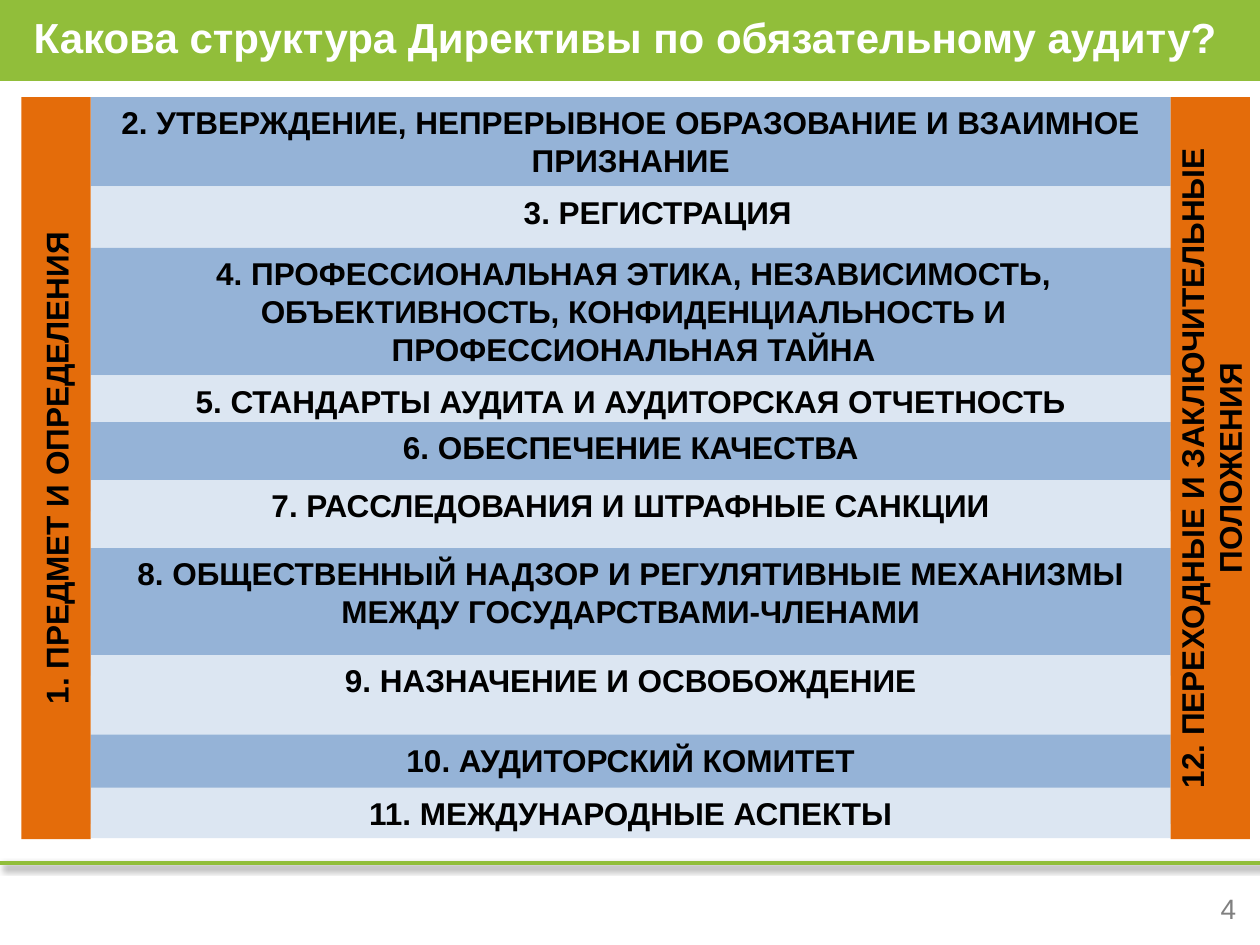
from dataclasses import dataclass

from lxml import etree
from pptx import Presentation
from pptx.dml.color import RGBColor
from pptx.enum.shapes import MSO_CONNECTOR, MSO_SHAPE
from pptx.enum.text import MSO_ANCHOR, PP_ALIGN
from pptx.oxml.ns import qn
from pptx.util import Cm, Pt

RECTANGLE = MSO_SHAPE.RECTANGLE
STRAIGHT = MSO_CONNECTOR.STRAIGHT
TOP, MIDDLE = MSO_ANCHOR.TOP, MSO_ANCHOR.MIDDLE
LEFT, CENTER, RIGHT = PP_ALIGN.LEFT, PP_ALIGN.CENTER, PP_ALIGN.RIGHT


@dataclass(frozen=True)
class Theme:
    font: str = "Arial"
    green: str = "91BE3A"
    orange: str = "E46C0A"
    blue: str = "95B3D7"
    pale: str = "DCE6F2"
    white: str = "FFFFFF"
    black: str = "000000"
    gray: str = "808080"
    title_size: int = 24
    body_size: int = 18
    number_size: int = 16


class PageBuilder:
    def __init__(self, page, theme):
        self.page = page
        self.theme = theme

    def set_text(self, shape, text, size, color, align, anchor, bold=True):
        frame = shape.text_frame
        frame.word_wrap = True
        frame.vertical_anchor = anchor
        frame.text = text
        para = frame.paragraphs[0]
        para.alignment = align
        for span in para.runs:
            span.font.name = self.theme.font
            span.font.size = Pt(size)
            span.font.bold = bold
            span.font.color.rgb = RGBColor.from_string(color)

    def label(self, left, top, width, height, text, size, color, align, bold):
        box = self.page.shapes.add_textbox(Cm(left), Cm(top), Cm(width), Cm(height))
        self.set_text(box, text, size, color, align, MIDDLE, bold)

    def block(self, left, top, width, height, fill):
        shape = self.page.shapes.add_shape(
            RECTANGLE, Cm(left), Cm(top), Cm(width), Cm(height))
        shape.shadow.inherit = False
        shape.fill.solid()
        shape.fill.fore_color.rgb = RGBColor.from_string(fill)
        shape.line.fill.background()
        return shape

    def chapter(self, left, top, width, height, fill, text):
        shape = self.block(left, top, width, height, fill)
        self.set_text(shape, text, self.theme.body_size, self.theme.black, CENTER, TOP)

    def pillar(self, left, top, width, height, text):
        shape = self.block(left, top, width, height, self.theme.orange)
        self.set_text(shape, text, self.theme.body_size, self.theme.black, CENTER, MIDDLE)
        shape.text_frame._txBody.bodyPr.set("vert", "vert270")

    def rule(self, top, width):
        line = self.page.shapes.add_connector(STRAIGHT, 0, Cm(top), Cm(width), Cm(top))
        line.line.color.rgb = RGBColor.from_string(self.theme.green)
        line.line.width = Pt(2)
        effects = etree.SubElement(line._element.spPr, qn("a:effectLst"))
        shadow = etree.SubElement(
            effects, qn("a:outerShdw"), blurRad=str(Pt(4)), dist=str(Pt(3)),
            dir=str(45 * 60000), algn="tl", rotWithShape="0")
        tint = etree.SubElement(shadow, qn("a:srgbClr"), val=self.theme.black)
        etree.SubElement(tint, qn("a:alpha"), val="40000")


PAGE_WIDTH, PAGE_HEIGHT = 25.4, 19.05
BODY_TOP, BODY_HEIGHT = 1.96, 14.96
CHAPTER_LEFT, CHAPTER_WIDTH = 1.83, 21.77
ONE_LINE, TWO_LINES, THREE_LINES = 1.02, 1.8, 2.57

CHAPTERS = [
    (BODY_TOP, CHAPTER_WIDTH, TWO_LINES,
     "2. УТВЕРЖДЕНИЕ, НЕПРЕРЫВНОЕ ОБРАЗОВАНИЕ И ВЗАИМНОЕ ПРИЗНАНИЕ"),
    (3.76, 22.86, TWO_LINES, "3. РЕГИСТРАЦИЯ"),
    (5, 21.89, THREE_LINES,
     "4. ПРОФЕССИОНАЛЬНАЯ ЭТИКА, НЕЗАВИСИМОСТЬ, ОБЪЕКТИВНОСТЬ, "
     "КОНФИДЕНЦИАЛЬНОСТЬ И ПРОФЕССИОНАЛЬНАЯ ТАЙНА"),
    (7.57, CHAPTER_WIDTH, ONE_LINE, "5. СТАНДАРТЫ АУДИТА И АУДИТОРСКАЯ ОТЧЕТНОСТЬ"),
    (8.51, CHAPTER_WIDTH, TWO_LINES, "6. ОБЕСПЕЧЕНИЕ КАЧЕСТВА"),
    (9.68, CHAPTER_WIDTH, TWO_LINES, "7. РАССЛЕДОВАНИЯ И ШТРАФНЫЕ САНКЦИИ"),
    (11.05, CHAPTER_WIDTH, THREE_LINES,
     "8. ОБЩЕСТВЕННЫЙ НАДЗОР И РЕГУЛЯТИВНЫЕ МЕХАНИЗМЫ "
     "МЕЖДУ ГОСУДАРСТВАМИ-ЧЛЕНАМИ"),
    (13.21, CHAPTER_WIDTH, TWO_LINES, "9. НАЗНАЧЕНИЕ И ОСВОБОЖДЕНИЕ"),
    (14.81, CHAPTER_WIDTH, TWO_LINES, "10. АУДИТОРСКИЙ КОМИТЕТ"),
    (15.88, CHAPTER_WIDTH, ONE_LINE, "11. МЕЖДУНАРОДНЫЕ АСПЕКТЫ"),
]

PILLARS = [
    (0.43, 1.4, "1. ПРЕДМЕТ И ОПРЕДЕЛЕНИЯ"),
    (CHAPTER_LEFT + CHAPTER_WIDTH, 1.6, "12. ПЕРЕХОДНЫЕ И ЗАКЛЮЧИТЕЛЬНЫЕ ПОЛОЖЕНИЯ"),
]


def main():
    deck = Presentation()
    deck.slide_width, deck.slide_height = Cm(PAGE_WIDTH), Cm(PAGE_HEIGHT)
    theme = Theme()
    builder = PageBuilder(deck.slides.add_slide(deck.slide_layouts[6]), theme)

    builder.block(0, 0, PAGE_WIDTH, 1.63, theme.green)
    builder.rule(17.4, PAGE_WIDTH)
    builder.label(0.43, -0.15, 24.97, 1.78,
                  "Какова структура Директивы по обязательному аудиту?",
                  theme.title_size, theme.white, LEFT, True)
    builder.label(23.67, 17.81, 1.5, 1.02, "4",
                  theme.number_size, theme.gray, RIGHT, False)

    for index, (top, width, height, text) in enumerate(CHAPTERS):
        fill = theme.pale if index % 2 else theme.blue
        builder.chapter(CHAPTER_LEFT, top, width, height, fill, text)
    for left, width, text in PILLARS:
        builder.pillar(left, BODY_TOP, width, BODY_HEIGHT, text)

    deck.save("out.pptx")


if __name__ == "__main__":
    main()
